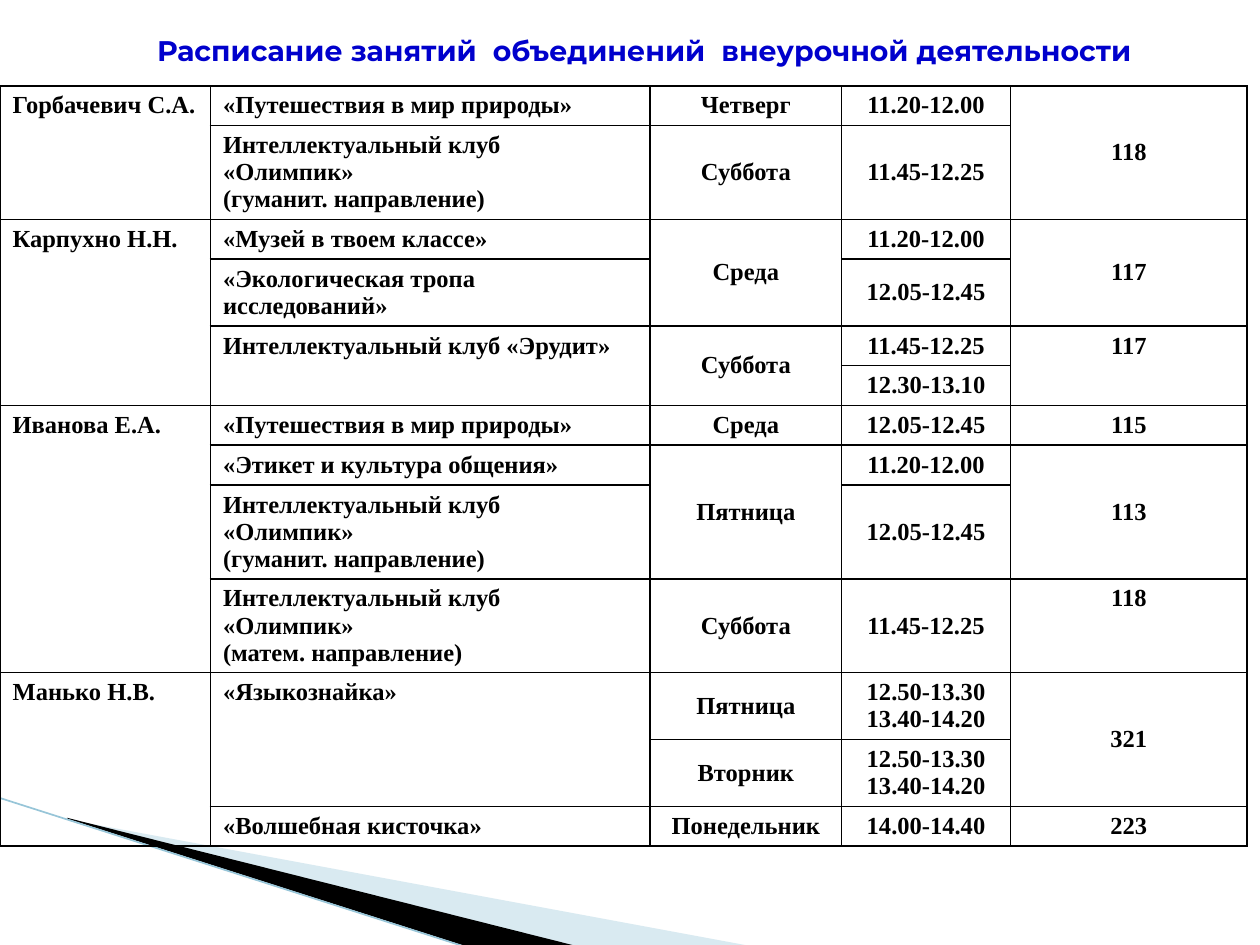
"""Build a one-page timetable of after-school clubs."""
from lxml.etree import SubElement
from pptx import Presentation
from pptx.dml.color import RGBColor
from pptx.enum.shapes import MSO_CONNECTOR
from pptx.enum.text import MSO_ANCHOR, PP_ALIGN
from pptx.oxml.ns import qn
from pptx.util import Pt

BLACK = RGBColor(0, 0, 0)
TITLE_BLUE = RGBColor(0x00, 0x00, 0xCC)
GREY = RGBColor(0x46, 0x46, 0x46)
PALE_BLUE = RGBColor(0xA0, 0xCB, 0xDC)
EDGE_BLUE = RGBColor(0x97, 0xC5, 0xD8)

TITLE_SPANS = [
    ("Расписание занятий  объединений  внеурочной деятельности",
     {"size": Pt(16.2), "name": "Montserrat", "bold": True}, TITLE_BLUE),
    (" ", {"size": Pt(33.3), "name": "Courier New", "bold": False}, GREY),
]
WEDGES = [
    ([(39.6, 468.5), (428.4, 540.5), (328.3, 540.5), (39.6, 468)], PALE_BLUE, 40),
    ([(38.2, 467.3), (329, 540.5), (267.8, 541.2), (38.9, 468)], BLACK, 100),
]
CELL_FONT = {"size": Pt(14), "name": "Times New Roman", "bold": True}
COLUMN_WIDTHS = [120.25, 251.25, 109.5, 96.5, 135.25]
ROW_HEIGHTS = [22, 37, 22, 22, 22, 22, 22, 22, 37, 37, 37, 37, 22]
TOP_ROOM_ROWS = {4, 6, 9, 12}
HUMANITIES = "Интеллектуальный клуб «Олимпик»\n(гуманит. направление)"
MATHS = "Интеллектуальный клуб «Олимпик»\n(матем. направление)"
DOUBLE_LESSON = "12.50-13.30\n13.40-14.20"
TIMETABLE = [
    ["Горбачевич С.А.", "«Путешествия в мир природы»", "Четверг", "11.20-12.00", "118"],
    [None, HUMANITIES, "Суббота", "11.45-12.25", None],
    ["Карпухно Н.Н.", "«Музей в твоем классе»", "Среда", "11.20-12.00", "117"],
    [None, "«Экологическая тропа исследований»", None, "12.05-12.45", None],
    [None, "Интеллектуальный клуб «Эрудит»", "Суббота", "11.45-12.25", "117"],
    [None, None, None, "12.30-13.10", None],
    ["Иванова Е.А.", "«Путешествия в мир природы»", "Среда", "12.05-12.45", "115"],
    [None, "«Этикет и культура общения»", "Пятница", "11.20-12.00", "113"],
    [None, HUMANITIES, None, "12.05-12.45", None],
    [None, MATHS, "Суббота", "11.45-12.25", "118"],
    ["Манько Н.В.", "«Языкознайка»", "Пятница", DOUBLE_LESSON, "321"],
    [None, None, "Вторник", DOUBLE_LESSON, None],
    [None, "«Волшебная кисточка»", "Понедельник", "14.00-14.40", "223"],
]


def format_font(font, values, color):
    for name, value in values.items():
        setattr(font, name, value)
    font.color.rgb = color


def add_borders(cell):
    properties = cell._tc.get_or_add_tcPr()
    for position, side in enumerate(("lnL", "lnR", "lnT", "lnB")):
        line = SubElement(properties, qn(f"a:{side}"), w=str(Pt(1)))
        fill = SubElement(line, qn("a:solidFill"))
        SubElement(fill, qn("a:srgbClr"), val=str(BLACK))
        properties.insert(position, line)


deck = Presentation()
deck.slide_width, deck.slide_height = Pt(720), Pt(540)
page = deck.slides.add_slide(deck.slide_layouts[5])

title = page.shapes.title
title_place = {"left": Pt(36), "top": Pt(0), "width": Pt(684), "height": Pt(44)}
for name, value in title_place.items():
    setattr(title, name, value)
title.text_frame.vertical_anchor = MSO_ANCHOR.MIDDLE
title_paragraph = title.text_frame.paragraphs[0]
title_paragraph.alignment = PP_ALIGN.CENTER
for text, values, color in TITLE_SPANS:
    span = title_paragraph.add_run()
    span.text = text
    format_font(span.font, values, color)

for corners, color, opacity in WEDGES:
    points = [(Pt(x), Pt(y)) for x, y in corners]
    builder = page.shapes.build_freeform(*points[0])
    builder.add_line_segments(points[1:], close=True)
    wedge = builder.convert_to_shape()
    wedge.shadow.inherit = False
    wedge.fill.solid()
    wedge.fill.fore_color.rgb = color
    wedge.line.fill.background()
    if opacity < 100:
        wedge_color = wedge._element.spPr.find(qn("a:solidFill"))[0]
        SubElement(wedge_color, qn("a:alpha"), val=str(opacity * 1000))

edge = page.shapes.add_connector(
    MSO_CONNECTOR.STRAIGHT, Pt(-0.7), Pt(455.8), Pt(267), Pt(541.4))
edge.line.color.rgb = EDGE_BLUE
edge.line.width = Pt(0.95)
SubElement(edge._element.spPr, qn("a:effectLst"))

frame = page.shapes.add_table(
    len(ROW_HEIGHTS), len(COLUMN_WIDTHS), Pt(0), Pt(49), Pt(711), Pt(463))
table = frame.table
table.first_row = table.horz_banding = False
for column, width in zip(table.columns, COLUMN_WIDTHS):
    column.width = Pt(width)
for row, height in zip(table.rows, ROW_HEIGHTS):
    row.height = Pt(height)

for row_index, entries in enumerate(TIMETABLE):
    for column_index, text in enumerate(entries):
        cell = table.cell(row_index, column_index)
        cell.fill.background()
        add_borders(cell)
        if text is None:
            continue
        last = row_index
        while last + 1 < len(TIMETABLE) and TIMETABLE[last + 1][column_index] is None:
            last += 1
        if last > row_index:
            cell.merge(table.cell(last, column_index))
        cell.text = text
        at_top = column_index < 2 or (column_index == 4 and row_index in TOP_ROOM_ROWS)
        cell.vertical_anchor = MSO_ANCHOR.TOP if at_top else MSO_ANCHOR.MIDDLE
        for paragraph in cell.text_frame.paragraphs:
            paragraph.alignment = PP_ALIGN.LEFT if column_index < 2 else PP_ALIGN.CENTER
            for span in paragraph.runs:
                format_font(span.font, CELL_FONT, BLACK)

deck.save("out.pptx")
